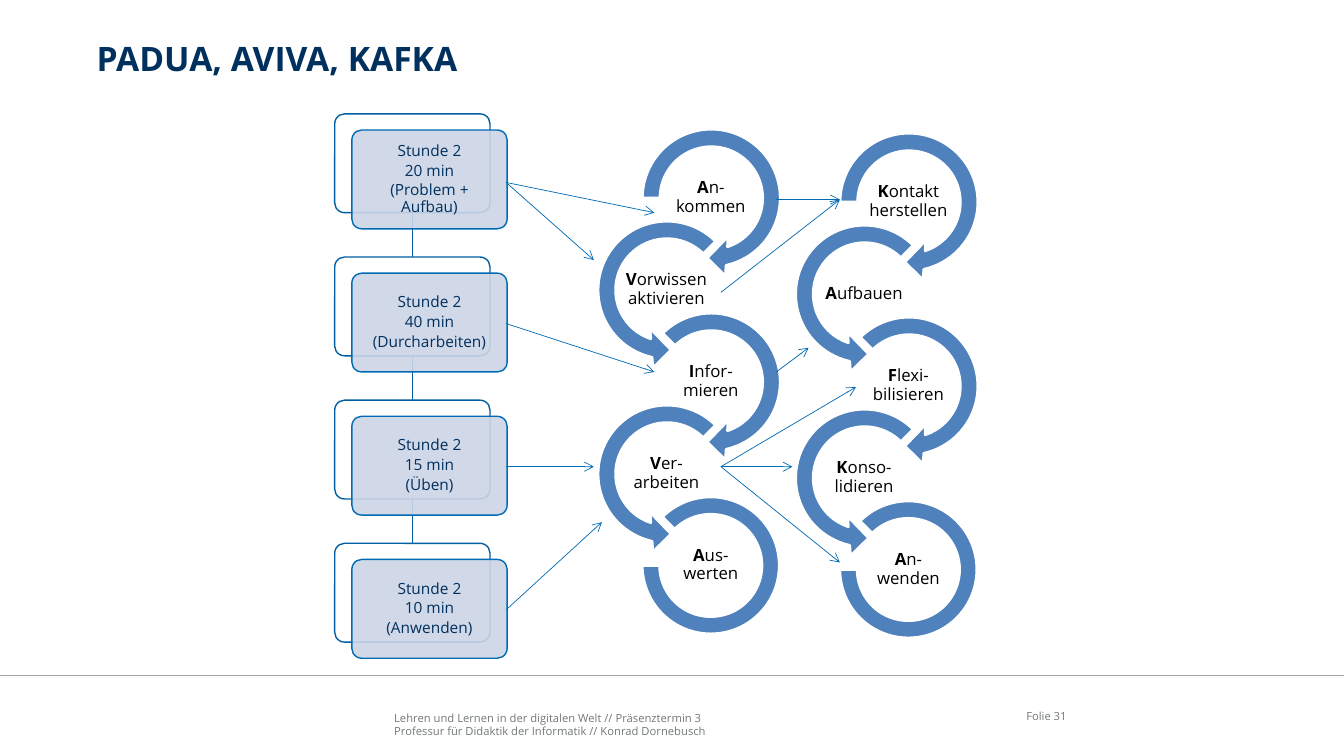
from pptx import Presentation
from pptx.dml.color import RGBColor
from pptx.enum.shapes import MSO_CONNECTOR, MSO_SHAPE
from pptx.enum.text import MSO_ANCHOR, PP_ALIGN
from pptx.oxml.ns import qn
from pptx.util import Inches, Pt
from lxml import etree

STRAIGHT = MSO_CONNECTOR.STRAIGHT
ROUNDED = MSO_SHAPE.ROUNDED_RECTANGLE
RIGHT_ARROW = MSO_SHAPE.CIRCULAR_ARROW
LEFT_ARROW = MSO_SHAPE.LEFT_CIRCULAR_ARROW
ARC = MSO_SHAPE.BLOCK_ARC
TOP, MIDDLE, BOTTOM = MSO_ANCHOR.TOP, MSO_ANCHOR.MIDDLE, MSO_ANCHOR.BOTTOM
LEFT, CENTER, RIGHT = PP_ALIGN.LEFT, PP_ALIGN.CENTER, PP_ALIGN.RIGHT

FONT = "Open Sans"
COLORS = {name: RGBColor.from_string(value) for name, value in {
    "navy": "00305E", "blue": "006AB3", "link": "0060A2", "card": "CCD4E5",
    "ring": "4F81BD", "gray": "727879", "rule": "A6A6A6",
    "white": "FFFFFF", "black": "000000",
}.items()}

prs = Presentation()
prs.slide_width, prs.slide_height = Inches(13.33), Inches(7.5)
s = prs.slides.add_slide(prs.slide_layouts[6])


def add_text(x, y, w, h, lines, size, color, align=LEFT, anchor=TOP, inset=0,
             spacing=1.0, after=0):
    tf = s.shapes.add_textbox(Inches(x), Inches(y), Inches(w), Inches(h)).text_frame
    tf.word_wrap = True
    tf.vertical_anchor = anchor
    tf.margin_left = tf.margin_right = tf.margin_top = tf.margin_bottom = Inches(inset)
    for i, line in enumerate(lines):
        p = tf.paragraphs[0] if i == 0 else tf.add_paragraph()
        p.text = line
        p.alignment = align
        p.line_spacing = spacing
        p.space_after = Pt(after)
        p.font.name, p.font.size = FONT, Pt(size)
        p.font.color.rgb = COLORS[color]
    return tf.paragraphs[0]


def add_line(x1, y1, x2, y2, color, width, arrow=False):
    line = s.shapes.add_connector(STRAIGHT, Inches(x1), Inches(y1), Inches(x2), Inches(y2))
    line.line.color.rgb = COLORS[color]
    line.line.width = Pt(width)
    if arrow:
        etree.SubElement(line.line._get_or_add_ln(), qn("a:tailEnd"), type="arrow")
    etree.SubElement(line._element.spPr, qn("a:effectLst"))


add_text(3.91, 7.02, 5.67, 0.3, [
    "Lehren und Lernen in der digitalen Welt // Präsenztermin 3",
    "Professur für Didaktik der Informatik // Konrad Dornebusch",
], 8, "gray", anchor=BOTTOM)
add_line(0, 6.7, 13.33, 6.7, "rule", 1)
add_text(9.81, 6.9, 0.77, 0.4, ["Folie 31"], 8, "gray", RIGHT, MIDDLE)

RING_PITCH = 0.9125
RING_STEPS = [
    (RIGHT_ARROW, 0.44, 0, 1.59, (0.11, 11.423, 45, 108, 0.125)),
    (LEFT_ARROW, 0, 0, 1.59, (0.11, 11.423, 63, 189, 0.125)),
    (RIGHT_ARROW, 0.44, 0, 1.59, (0.11, 11.423, 45, 135, 0.125)),
    (LEFT_ARROW, 0, 0, 1.59, (0.11, 11.423, 63, 189, 0.125)),
    (ARC, 0.44, 0.11, 1.36, (135, 108, 0.127)),
]
CHAINS = [
    (7.78, 1.21, ["Kontakt herstellen", "Aufbauen", "Flexi-bilisieren",
                  "Konso-lidieren", "An-wenden"]),
    (5.82, 1.17, ["An-kommen", "Vorwissen aktivieren", "Infor-mieren",
                  "Ver-arbeiten", "Aus-werten"]),
]
for left, top, labels in CHAINS:
    for i, (label, (kind, shift, inner, size, adjustments)) in enumerate(zip(labels, RING_STEPS)):
        x, y = left + shift, top + i * RING_PITCH
        ring = s.shapes.add_shape(kind, Inches(x + inner), Inches(y + inner),
                                  Inches(size), Inches(size))
        ring.shadow.inherit = False
        for k, value in enumerate(adjustments):
            ring.adjustments[k] = value
        ring.fill.solid()
        ring.fill.fore_color.rgb = COLORS["ring"]
        ring.line.color.rgb = COLORS["white"]
        ring.line.width = Pt(2)
        p = add_text(x + 0.35, y + 0.57, 0.88, 0.44, [label[0]], 12, "black",
                     CENTER, MIDDLE, 0.01, 0.9)
        p.runs[0].font.bold = True
        r = p.add_run()
        r.text = label[1:]

CARD_TOP, CARD_PITCH, CARD_W, CARD_H = 1.13, 1.42, 1.54, 0.98
PHASES = [("20 min", "(Problem + Aufbau)"), ("40 min", "(Durcharbeiten)"),
          ("15 min", "(Üben)"), ("10 min", "(Anwenden)")]
for i in range(len(PHASES) - 1):
    y = CARD_TOP + i * CARD_PITCH
    add_line(4.09, y + CARD_H, 4.09, y + CARD_PITCH, "link", 1)
for i, (duration, phase) in enumerate(PHASES):
    y = CARD_TOP + i * CARD_PITCH
    for x, dy, fill, outline in [(3.32, 0, "white", "link"), (3.49, 0.16, "card", "blue")]:
        card = s.shapes.add_shape(ROUNDED, Inches(x), Inches(y + dy),
                                  Inches(CARD_W), Inches(CARD_H))
        card.shadow.inherit = False
        card.adjustments[0] = 0.1
        card.fill.solid()
        card.fill.fore_color.rgb = COLORS[fill]
        card.line.color.rgb = COLORS[outline]
        card.line.width = Pt(1)
    rgb = card._element.spPr.find(qn("a:solidFill"))[0]
    etree.SubElement(rgb, qn("a:alpha"), val="90000")
    add_text(3.52, y + 0.19, 1.48, 0.92, ["Stunde 2", duration, phase], 11, "navy",
             CENTER, MIDDLE, 0.05, 0.9, 2.2)

ARROWS = [
    (5.02, 1.81, 6.49, 2.11), (5.02, 3.21, 6.49, 3.69), (5.02, 4.63, 5.89, 4.63),
    (5.02, 6.05, 5.97, 5.18), (5.02, 1.81, 5.89, 2.58), (7.7, 1.98, 8.33, 1.98),
    (7.15, 2.9, 8.33, 1.98), (7.7, 3.69, 8.02, 3.45), (7.15, 4.63, 8.49, 3.84),
    (7.15, 4.63, 7.86, 4.63), (7.15, 4.63, 8.33, 5.58),
]
for ends in ARROWS:
    add_line(*ends, "blue", 0.5, arrow=True)

title = add_text(0.96, 0.38, 11.57, 0.75, ["PADUA, AVIVA, KAFKA"], 24, "navy")
title.font.bold = True

prs.save("out.pptx")
